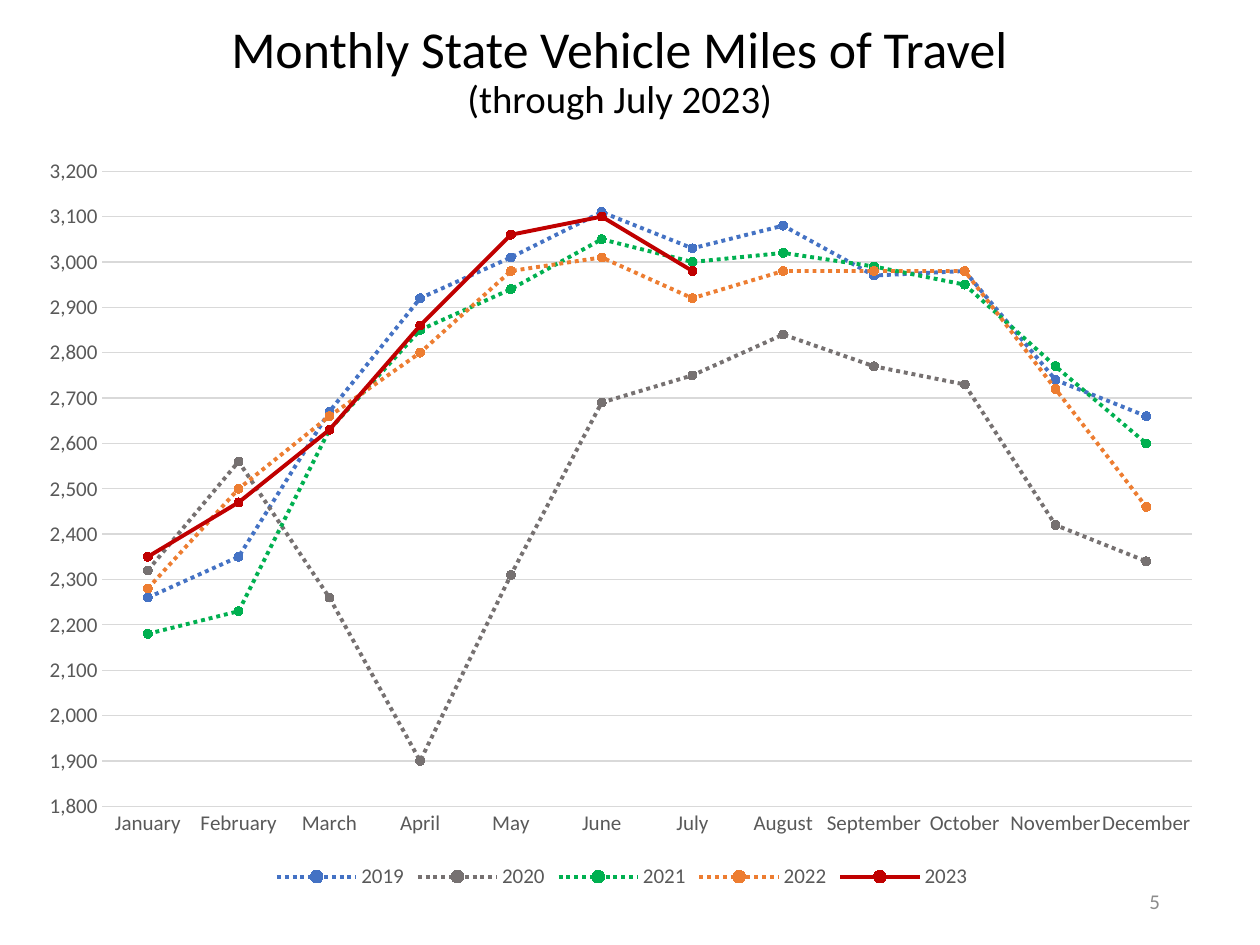
from lxml import etree
from pptx import Presentation
from pptx import util as u
from pptx.chart import data as cd
from pptx.dml.color import RGBColor
from pptx.enum import chart as ch, dml, text
from pptx.oxml import ns

Pt = u.Pt
FONT = "Calibri"
COLORS = {
    "text": "000000", "label": "595959", "grid": "D9D9D9", "number": "8C8C8C",
    "2019": "4472C4", "2020": "767171", "2021": "00B050",
    "2022": "ED7D31", "2023": "C00000",
}
MONTHS = ["January", "February", "March", "April", "May", "June", "July",
          "August", "September", "October", "November", "December"]
MILES = {
    "2019": [2260, 2350, 2670, 2920, 3010, 3110, 3030, 3080, 2970, 2980, 2740, 2660],
    "2020": [2320, 2560, 2260, 1900, 2310, 2690, 2750, 2840, 2770, 2730, 2420, 2340],
    "2021": [2180, 2230, 2630, 2850, 2940, 3050, 3000, 3020, 2990, 2950, 2770, 2600],
    "2022": [2280, 2500, 2660, 2800, 2980, 3010, 2920, 2980, 2980, 2980, 2720, 2460],
    "2023": [2350, 2470, 2630, 2860, 3060, 3100, 2980] + [None] * 5,
}


def set_font(font, size, color):
    font.name = FONT
    font.size = Pt(size)
    font.color.rgb = RGBColor.from_string(COLORS[color])


def add_text(s, box, lines, color, align, anchor, spacing):
    tf = s.shapes.add_textbox(*[Pt(v) for v in box]).text_frame
    tf.word_wrap = True
    tf.vertical_anchor = anchor
    for i, (line, size) in enumerate(lines):
        p = tf.paragraphs[0] if i == 0 else tf.add_paragraph()
        p.alignment = align
        p.line_spacing = spacing
        r = p.add_run()
        r.text = line
        set_font(r.font, size, color)


prs = Presentation()
prs.slide_width, prs.slide_height = Pt(720), Pt(540)
s = prs.slides.add_slide(prs.slide_layouts[6])

# Line chart
data = cd.CategoryChartData(number_format="#,##0")
data.categories = MONTHS
for year, values in MILES.items():
    data.add_series(year, values)
chart = s.shapes.add_chart(ch.XL_CHART_TYPE.LINE_MARKERS, Pt(15), Pt(82),
                           Pt(681), Pt(429), data).chart
chart.has_title = False
set_font(chart.font, 12, "label")

# Series: dotted for past years, solid for the current one
for series in chart.plots[0].series:
    color = RGBColor.from_string(COLORS[series.name])
    series.smooth = False
    line = series.format.line
    line.width = Pt(2.25)
    line.color.rgb = color
    if series.name != "2023":
        line.dash_style = dml.MSO_LINE.ROUND_DOT
    marker = series.marker
    marker.style = ch.XL_MARKER_STYLE.CIRCLE
    marker.size = 5
    marker.format.fill.solid()
    marker.format.fill.fore_color.rgb = color
    marker.format.line.color.rgb = color
chart.plots[0].vary_by_categories = False

# Axes and gridlines
months, miles = chart.category_axis, chart.value_axis
miles.minimum_scale, miles.maximum_scale, miles.major_unit = 1800, 3200, 100
miles.has_major_gridlines = True
miles.tick_labels.number_format = "#,##0"
miles.tick_labels.number_format_is_linked = False
miles.format.line.fill.background()
for line in (months.format.line, miles.major_gridlines.format.line):
    line.color.rgb = RGBColor.from_string(COLORS["grid"])
    line.width = Pt(0.75)
for axis in (months, miles):
    axis.major_tick_mark = axis.minor_tick_mark = ch.XL_TICK_MARK.NONE
    set_font(axis.tick_labels.font, 12, "label")

# Legend
chart.has_legend = True
chart.legend.position = ch.XL_LEGEND_POSITION.BOTTOM
chart.legend.include_in_layout = False
set_font(chart.legend.font, 12, "label")

# Plot area as fractions of the chart
plot_area = chart.plots[0]._element.getparent()
for old in plot_area.findall(ns.qn("c:layout")):
    plot_area.remove(old)
layout = etree.Element(ns.qn("c:layout"))
plot_area.insert(0, layout)
manual = etree.SubElement(layout, ns.qn("c:manualLayout"))
for tag, value in [("layoutTarget", "inner"), ("xMode", "edge"), ("yMode", "edge"),
                   ("x", "0.064"), ("y", "0.037"), ("w", "0.914"), ("h", "0.846")]:
    etree.SubElement(manual, ns.qn("c:" + tag)).set("val", value)

# Slide number
add_text(s, (508, 500.5, 162, 28.5), [("5", 12)], "number",
         text.PP_ALIGN.RIGHT, text.MSO_ANCHOR.MIDDLE, 1.0)

# Title
add_text(s, (44, 6, 620.5, 67),
         [("Monthly State Vehicle Miles of Travel", 29.6), ("(through July 2023)", 22.2)],
         "text", text.PP_ALIGN.CENTER, text.MSO_ANCHOR.BOTTOM, 0.9)

prs.save("out.pptx")
